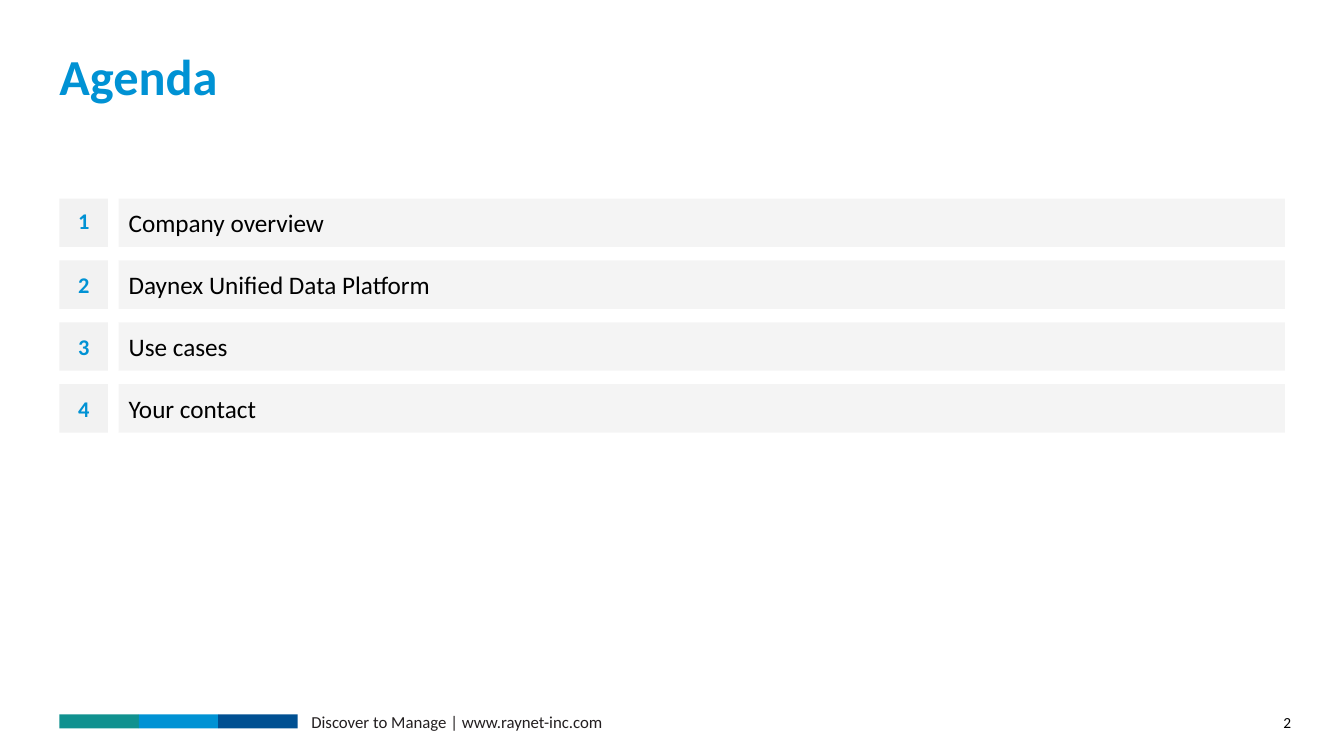
from lxml import etree
from pptx import Presentation
from pptx.dml.color import RGBColor
from pptx.enum.shapes import MSO_SHAPE
from pptx.enum.text import MSO_ANCHOR, PP_ALIGN
from pptx.oxml.ns import qn
from pptx.util import Pt

RECTANGLE = MSO_SHAPE.RECTANGLE
TOP, MIDDLE = MSO_ANCHOR.TOP, MSO_ANCHOR.MIDDLE
LEFT, CENTER = PP_ALIGN.LEFT, PP_ALIGN.CENTER

# Content
TITLE = "Agenda"
AGENDA = [  # topic, line spacing of its number
    ("Company overview", 0.9),
    ("Daynex Unified Data Platform", 1.0),
    ("Use cases", 1.0),
    ("Your contact", 1.0),
]
FOOTER = "Discover to Manage | www.raynet-inc.com"
PAGE_NUMBER = "2"

# Style and layout, in points
FONT = "Calibri"
BLUE, BLACK, FOOTER_INK, ROW_GRAY = "0092D4", "000000", "231F20", "F2F2F2"
STRIPE_COLORS = ["10918F", BLUE, "005092"]
MARGIN = 42.5
ROW_TOP, ROW_PITCH, ROW_HEIGHT = 141.8, 44.2, 34.6
TOPIC_LEFT, TOPIC_WIDTH = 84.8, 833
STRIPE_TOP, STRIPE_WIDTH, STRIPE_HEIGHT = 510.2, 56.7, 10
FOOTER_TOP, FOOTER_HEIGHT = 504.7, 23

presentation = Presentation()
presentation.slide_width, presentation.slide_height = Pt(960), Pt(540)
slide = presentation.slides.add_slide(presentation.slide_layouts[6])


def color(value):
    return RGBColor.from_string(value)


def add_rectangle(left, top, width, height, fill, opacity=100):
    shape = slide.shapes.add_shape(RECTANGLE, Pt(left), Pt(top), Pt(width), Pt(height))
    shape.shadow.inherit = False
    shape.line.fill.background()
    shape.fill.solid()
    shape.fill.fore_color.rgb = color(fill)
    if opacity < 100:
        color_element = shape.fill._xPr.find(".//" + qn("a:srgbClr"))
        etree.SubElement(color_element, qn("a:alpha"), val=str(opacity * 1000))
    return shape


def add_text_box(left, top, width, height):
    return slide.shapes.add_textbox(Pt(left), Pt(top), Pt(width), Pt(height))


def write(shape, text, size, ink, bold=False, align=LEFT, anchor=MIDDLE,
          line_spacing=1.0, inset=None):
    frame = shape.text_frame
    frame.word_wrap = True
    frame.vertical_anchor = anchor
    if inset is not None:
        frame.margin_left = frame.margin_right = Pt(inset)
        frame.margin_top = frame.margin_bottom = Pt(inset)
    paragraph = frame.paragraphs[0]
    paragraph.alignment = align
    paragraph.line_spacing = line_spacing
    run = paragraph.add_run()
    run.text = text
    run.font.name = FONT
    run.font.size = Pt(size)
    run.font.bold = bold
    run.font.color.rgb = color(ink)


# Footer: page number, three-colour stripe, tagline
write(add_text_box(900, FOOTER_TOP, 38.9, FOOTER_HEIGHT), PAGE_NUMBER,
      size=11, ink=BLACK, align=CENTER)
for index, stripe_color in enumerate(STRIPE_COLORS):
    add_rectangle(MARGIN + index * STRIPE_WIDTH, STRIPE_TOP,
                  STRIPE_WIDTH, STRIPE_HEIGHT, stripe_color)
write(add_text_box(215.3, FOOTER_TOP, 240.5, FOOTER_HEIGHT), FOOTER,
      size=12, ink=FOOTER_INK, anchor=TOP)

# Agenda rows: topic bar and number tile
for index, (topic, number_spacing) in enumerate(AGENDA):
    top = ROW_TOP + index * ROW_PITCH
    bar = add_rectangle(TOPIC_LEFT, top, TOPIC_WIDTH, ROW_HEIGHT, ROW_GRAY, opacity=80)
    write(bar, topic, size=18, ink=BLACK)
    tile = add_rectangle(MARGIN, top, ROW_HEIGHT, ROW_HEIGHT, ROW_GRAY)
    write(tile, str(index + 1), size=16, ink=BLUE, bold=True, align=CENTER,
          line_spacing=number_spacing)

# Title
write(add_text_box(MARGIN, 35.3, 681, 42.5), TITLE,
      size=36, ink=BLUE, bold=True, line_spacing=0.9, inset=0)

presentation.save("out.pptx")
